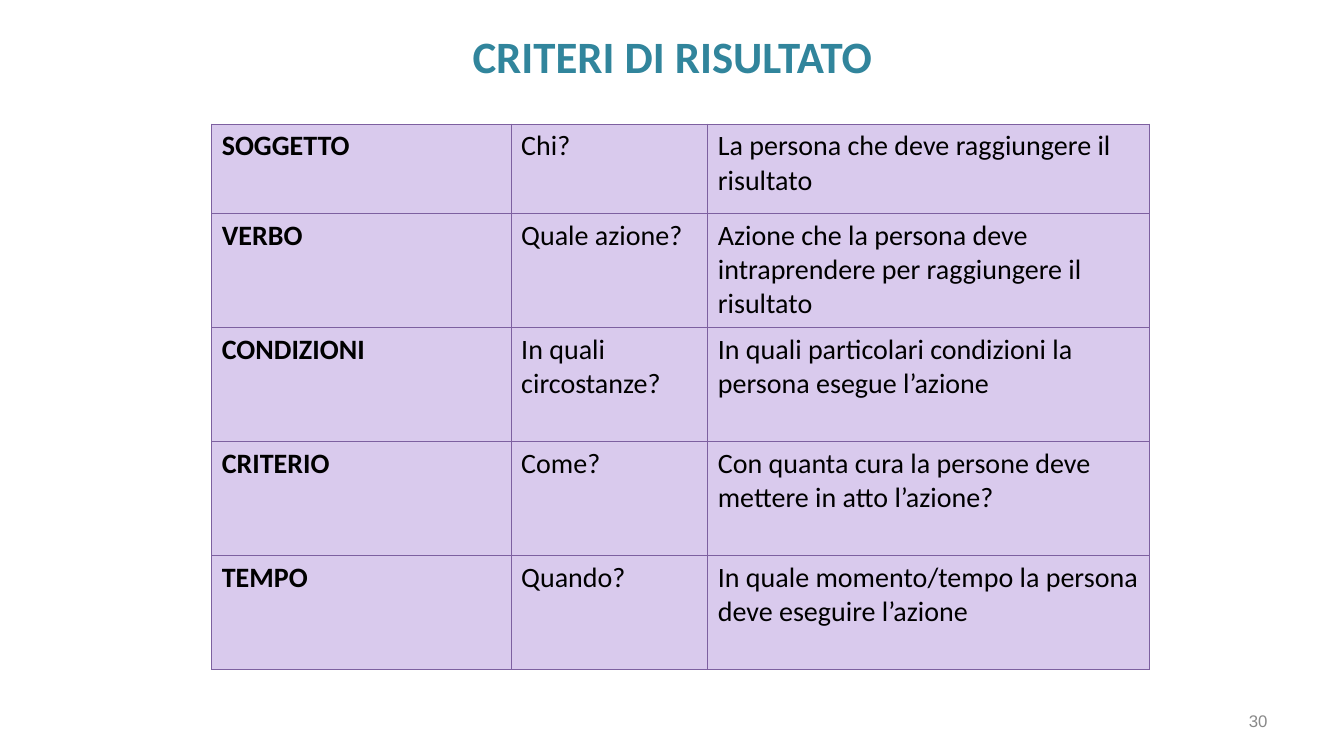
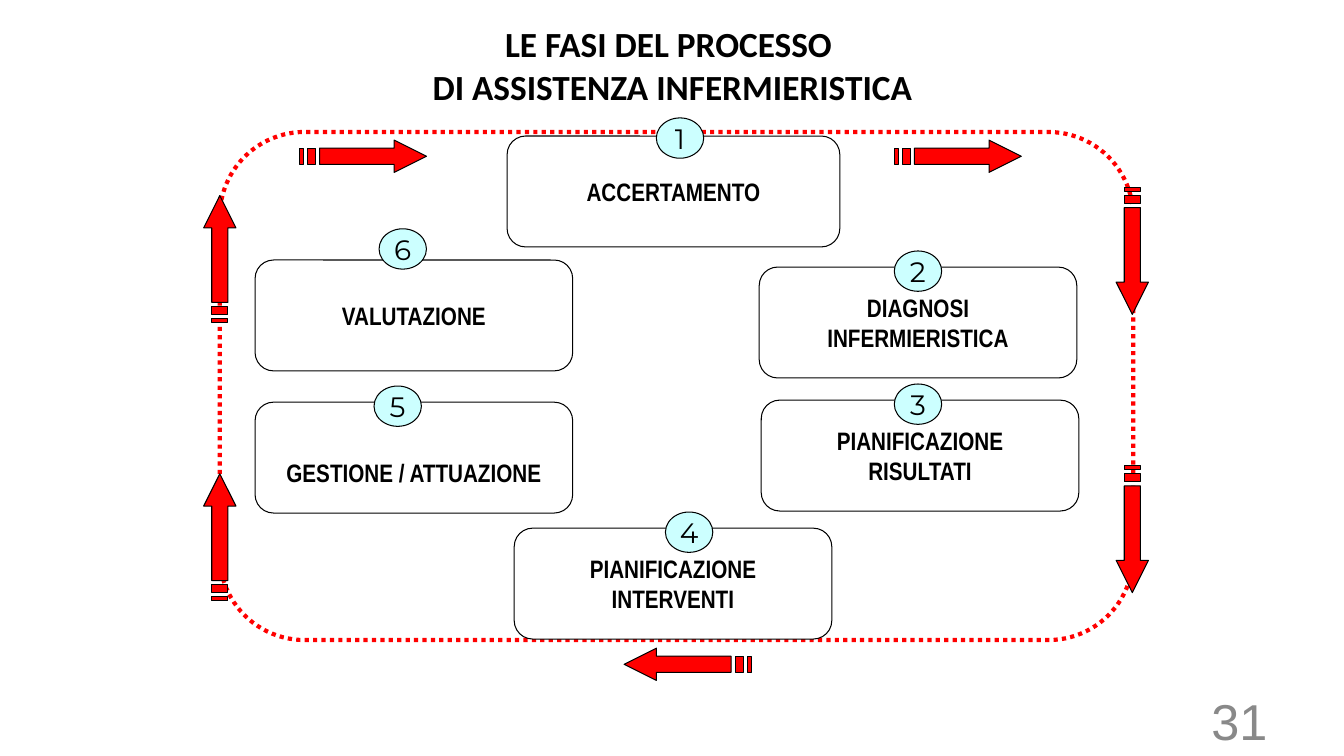
import pptx
import pptx.util
from pptx.dml.color import RGBColor
from pptx.enum.dml import MSO_LINE
from pptx.enum.shapes import MSO_SHAPE
from pptx.enum.text import MSO_ANCHOR, MSO_AUTO_SIZE, PP_ALIGN
from pptx.oxml.ns import qn
from pptx.util import Inches
from lxml import etree

# Shared colours and fonts
TEAL = RGBColor(0x31, 0x85, 0x9C)
BLACK = RGBColor(0x00, 0x00, 0x00)
WHITE = RGBColor(0xFF, 0xFF, 0xFF)
GREY = RGBColor(0x89, 0x89, 0x89)
RED = RGBColor(0xFF, 0x00, 0x00)
PALE_CYAN = RGBColor(0xCC, 0xFF, 0xFF)
LILAC = RGBColor(0xD9, 0xCA, 0xED)
PURPLE = RGBColor(0x7D, 0x60, 0xA0)
BODY_FONT = "Calibri"
NUMBER_FONT = "Arial"
PHASE_FONT = "Arial Narrow"
BADGE_FONT = "Montserrat"

# Criteria table
COLUMN_WIDTHS = [2.97, 1.95, 4.38]
ROW_HEIGHTS = [0.89] + [1.13] * 4
CRITERIA = [
    ("SOGGETTO", "Chi?", "La persona che deve raggiungere il risultato"),
    ("VERBO", "Quale azione?",
     "Azione che la persona deve intraprendere per raggiungere il risultato"),
    ("CONDIZIONI", "In quali circostanze?",
     "In quali particolari condizioni la persona esegue l’azione"),
    ("CRITERIO", "Come?",
     "Con quanta cura la persone deve mettere in atto l’azione?"),
    ("TEMPO", "Quando?",
     "In quale momento/tempo la persona deve eseguire l’azione"),
]

# Phases: number, text, box left, top, width, badge left, top, extra top margin
PHASES = [
    ("3", "PIANIFICAZIONE\nRISULTATI", 7.55, 3.97, 3.15, 8.87, 3.81, 0),
    ("2", "DIAGNOSI\nINFERMIERISTICA", 7.53, 2.65, 3.15, 8.87, 2.49, 0),
    ("4", "PIANIFICAZIONE\nINTERVENTI", 5.1, 5.24, 3.15, 6.6, 5.08, 0),
    ("5", "GESTIONE / ATTUAZIONE", 2.53, 3.99, 3.15, 3.71, 3.83, 0.3),
    ("6", "VALUTAZIONE", 2.53, 2.58, 3.15, 3.76, 2.27, 0),
    ("1", "ACCERTAMENTO", 5.03, 1.35, 3.3, 6.51, 1.17, 0),
]
PHASE_HEIGHT = 1.1
BADGE_SIZE = (0.47, 0.4)

# Arrows: centre and rotation, clockwise round the cycle
ARROWS = [
    (3.6, 1.55, 0), (9.5, 1.55, 0),
    (11.23, 2.49, 90), (11.23, 5.25, 90),
    (6.82, 6.59, 180),
    (2.18, 5.33, 270), (2.18, 2.57, 270),
]
ARROW_WIDTH, ARROW_HEIGHT = 1.26, 0.32


def bar(left, right):
    return [(left, 0.08), (right, 0.08), (right, 0.24), (left, 0.24)]


ARROW_CONTOURS = [
    [(0.94, 0), (0.94, 0.08), (0.2, 0.08), (0.2, 0.24), (0.94, 0.24),
     (0.94, ARROW_HEIGHT), (ARROW_WIDTH, ARROW_HEIGHT / 2)],
    bar(0.08, 0.16),
    bar(0, 0.04),
]


def inches(*values):
    return [Inches(value) for value in values]


def format_text(frame, font, size, color, align, bold=False):
    for paragraph in frame.paragraphs:
        paragraph.alignment = align
        for run in paragraph.runs:
            run.font.name = font
            run.font.size = pptx.util.Pt(size)
            run.font.bold = bold
            run.font.color.rgb = color


def add_titled_slide(deck, title, top, height, size, color, number, number_size):
    """Slide with a centred title and a number at lower right."""
    slide = deck.slides.add_slide(deck.slide_layouts[5])
    heading = slide.shapes.title
    heading.left, heading.top, heading.width, heading.height = inches(
        2.17, top, 9, height)
    frame = heading.text_frame
    frame.text = title
    frame.auto_size = MSO_AUTO_SIZE.NONE
    frame.vertical_anchor = MSO_ANCHOR.MIDDLE
    format_text(frame, BODY_FONT, size, color, PP_ALIGN.CENTER, True)

    page = slide.shapes.add_textbox(*inches(9.56, 6.95, 3.11, 0.4)).text_frame
    page.word_wrap = True
    page.vertical_anchor = MSO_ANCHOR.MIDDLE
    page.text = number
    format_text(page, NUMBER_FONT, number_size, GREY, PP_ALIGN.RIGHT)
    return slide


def style_cell(cell):
    properties = cell._tc.get_or_add_tcPr()
    for side in ("a:lnL", "a:lnR", "a:lnT", "a:lnB"):
        border = etree.SubElement(properties, qn(side), w=str(pptx.util.Pt(0.75)))
        paint = etree.SubElement(border, qn("a:solidFill"))
        etree.SubElement(paint, qn("a:srgbClr"), val=str(PURPLE))
    cell.fill.solid()
    cell.fill.fore_color.rgb = LILAC


def add_criteria_table(slide):
    table = slide.shapes.add_table(
        len(CRITERIA), len(COLUMN_WIDTHS),
        *inches(2.1, 1.23, sum(COLUMN_WIDTHS), sum(ROW_HEIGHTS))).table
    table.first_row = table.horz_banding = False
    for column, width in zip(table.columns, COLUMN_WIDTHS):
        column.width = Inches(width)
    for row, height, texts in zip(table.rows, ROW_HEIGHTS, CRITERIA):
        row.height = Inches(height)
        for index, (cell, text) in enumerate(zip(row.cells, texts)):
            cell.text_frame.text = text
            format_text(cell.text_frame, BODY_FONT, 20, BLACK,
                        PP_ALIGN.LEFT, index == 0)
            style_cell(cell)


def paint_shape(shape, fill, line=BLACK, weight=0.75):
    shape.shadow.inherit = False
    if fill is None:
        shape.fill.background()
    else:
        shape.fill.solid()
        shape.fill.fore_color.rgb = fill
    shape.line.color.rgb = line
    shape.line.width = pptx.util.Pt(weight)


def add_label_shape(shapes, kind, box, fill, text, font, size, bold):
    shape = shapes.add_shape(kind, *inches(*box))
    paint_shape(shape, fill)
    frame = shape.text_frame
    frame.word_wrap = False
    frame.vertical_anchor = MSO_ANCHOR.MIDDLE
    frame.text = text
    format_text(frame, font, size, BLACK, PP_ALIGN.CENTER, bold)
    return shape


def add_phase(slide, number, text, left, top, width, badge_left, badge_top, drop):
    phase = slide.shapes.add_group_shape().shapes
    box = add_label_shape(phase, MSO_SHAPE.ROUNDED_RECTANGLE,
                          (left, top, width, PHASE_HEIGHT), WHITE,
                          text, PHASE_FONT, 18, True)
    box.text_frame.margin_top = Inches(0.05 + drop)
    add_label_shape(phase, MSO_SHAPE.OVAL, (badge_left, badge_top, *BADGE_SIZE),
                    PALE_CYAN, number, BADGE_FONT, 20, False)


def add_striped_arrow(slide, center_x, center_y, rotation):
    left, top = center_x - ARROW_WIDTH / 2, center_y - ARROW_HEIGHT / 2
    contours = [[inches(left + x, top + y) for x, y in contour]
                for contour in ARROW_CONTOURS]
    builder = slide.shapes.build_freeform(*contours[0][0])
    for index, (start, *others) in enumerate(contours):
        if index:
            builder.move_to(*start)
        builder.add_line_segments(others, close=True)
    arrow = builder.convert_to_shape()
    paint_shape(arrow, RED)
    arrow.rotation = rotation


def add_cycle(slide):
    track = slide.shapes.add_shape(MSO_SHAPE.ROUNDED_RECTANGLE,
                                   *inches(2.18, 1.31, 9.06, 5.04))
    paint_shape(track, None, RED, 3)
    track.line.dash_style = MSO_LINE.ROUND_DOT
    for phase in PHASES:
        add_phase(slide, *phase)
    for arrow in ARROWS:
        add_striped_arrow(slide, *arrow)


def main():
    deck = pptx.Presentation()
    deck.slide_width, deck.slide_height = inches(13.33, 7.5)

    # Outcome criteria
    criteria = add_titled_slide(deck, "CRITERI DI RISULTATO",
                                0.13, 0.85, 32, TEAL, "30", 12)
    add_criteria_table(criteria)

    # Nursing process cycle
    process = add_titled_slide(
        deck, "LE FASI DEL PROCESSO \vDI ASSISTENZA INFERMIERISTICA",
        0.3, 0.69, 25.2, BLACK, "31", 36)
    add_cycle(process)

    deck.save("out.pptx")


if __name__ == "__main__":
    main()
